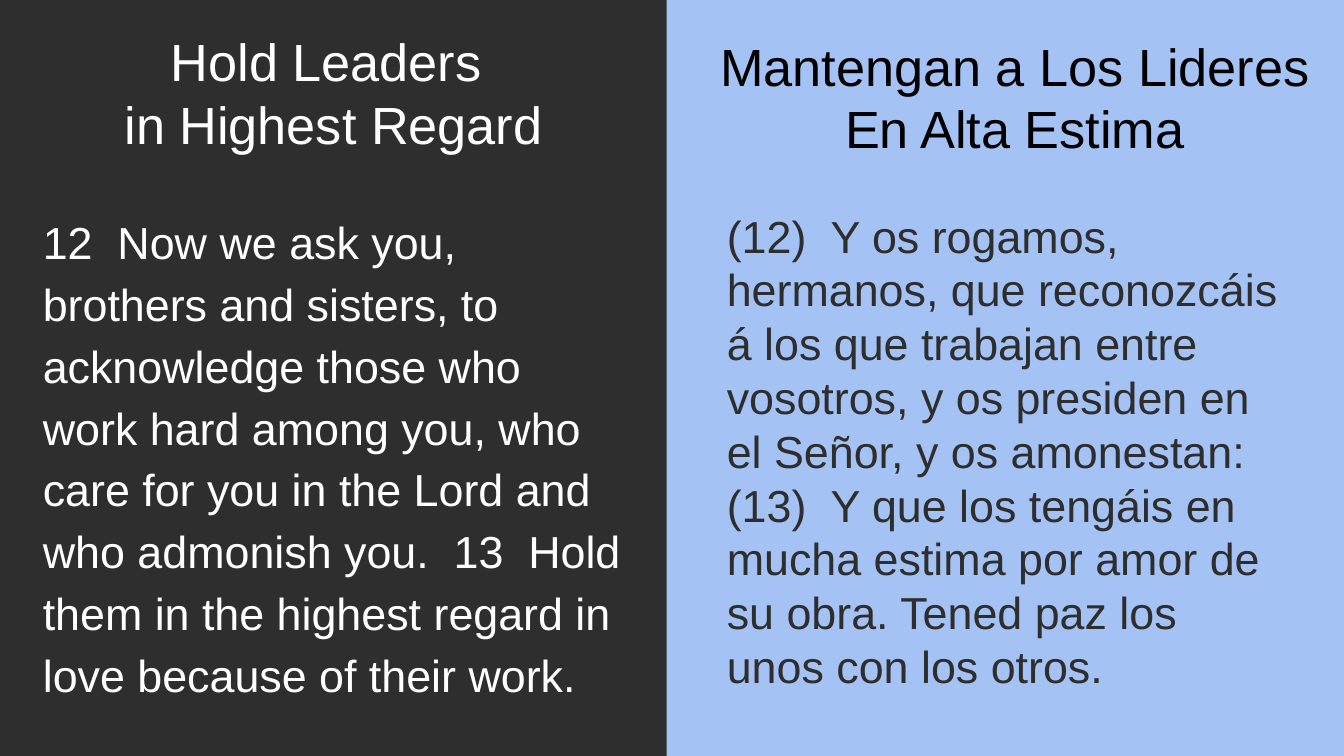
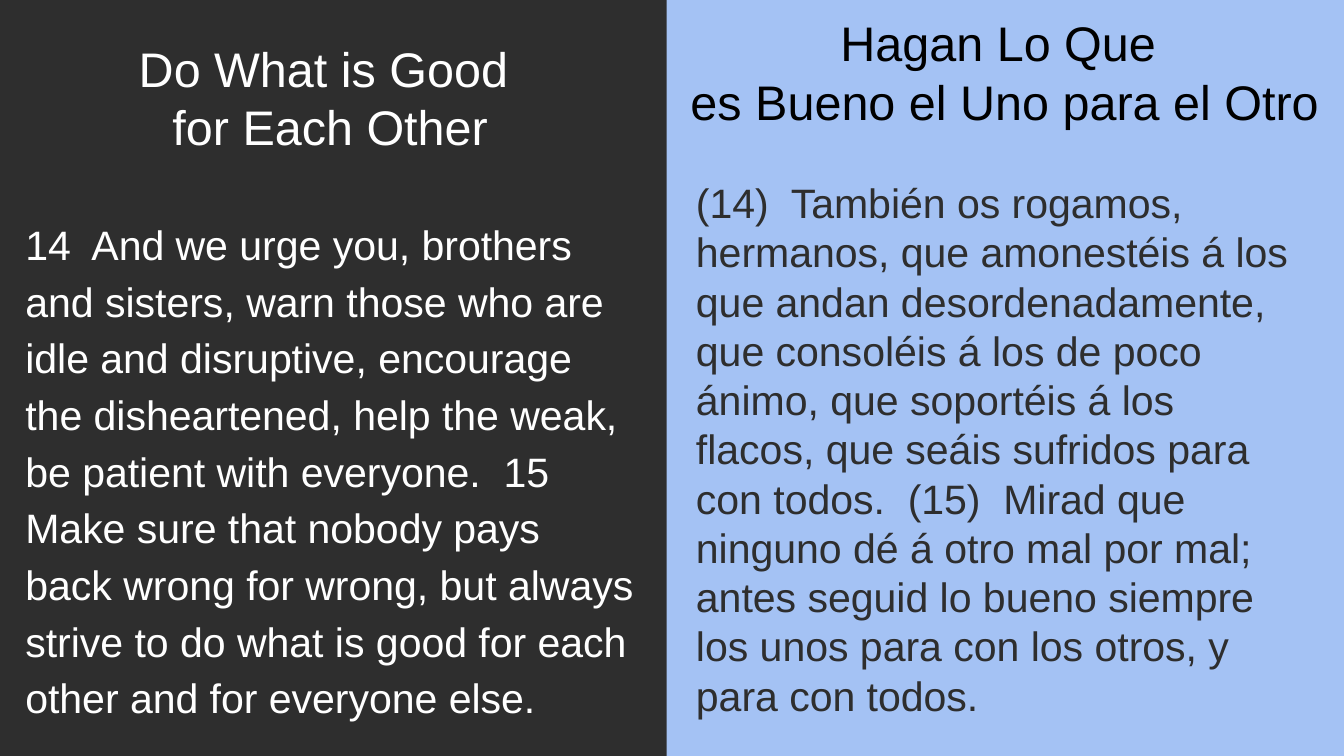
from dataclasses import dataclass

from pptx import Presentation
from pptx.dml.color import RGBColor
from pptx.enum.shapes import MSO_SHAPE
from pptx.enum.text import MSO_ANCHOR, PP_ALIGN
from pptx.util import Inches, Pt


@dataclass(frozen=True)
class Theme:
    font: str = "Arial"
    dark: RGBColor = RGBColor(0x2E, 0x2E, 0x2E)
    light: RGBColor = RGBColor(0xA4, 0xC2, 0xF4)
    white: RGBColor = RGBColor(0xFF, 0xFF, 0xFF)
    black: RGBColor = RGBColor(0, 0, 0)
    title_sizes: tuple = (28, 26)
    verse_sizes: tuple = (24, 22)
    margin: float = 0.1
    outline: float = 2.25
    english_spacing: float = 1.15


THEME = Theme()
WIDTH, HEIGHT = Inches(10), Inches(5.625)
COLUMNS = ROWS = 100
SPLIT = 49.6


@dataclass(frozen=True)
class Passage:
    title: tuple
    title_area: tuple
    verse: str
    verse_area: tuple


LESSONS = [
    (
        Passage(
            ("Hold Leaders ", "in Highest Regard"),
            (0, 2.1, SPLIT, 33.6),
            "12  Now we ask you, brothers and sisters, to acknowledge those who work hard "
            "among you, who care for you in the Lord and who admonish you.  13  Hold them "
            "in the highest regard in love because of their work.",
            (2.2, 25.6, 45.1, 67.4),
        ),
        Passage(
            ("Mantengan a Los Lideres", "En Alta Estima"),
            (51.4, 2.7, 48.2, 22.2),
            "(12)  Y os rogamos, hermanos, que reconozcáis á los que trabajan entre "
            "vosotros, y os presiden en el Señor, y os amonestan:  (13)  Y que los tengáis "
            "en mucha estima por amor de su obra. Tened paz los unos con los otros.",
            (53.1, 25.8, 43.4, 72.5),
        ),
    ),
    (
        Passage(
            ("Do What is Good ", "for Each Other"),
            (-0.2, 3.4, SPLIT, 33.6),
            "14  And we urge you, brothers and sisters, warn those who are idle and "
            "disruptive, encourage the disheartened, help the weak, be patient with "
            "everyone.  15  Make sure that nobody pays back wrong for wrong, but always "
            "strive to do what is good for each other and for everyone else.",
            (0.9, 26.3, 47.5, 69.9),
        ),
        Passage(
            ("Hagan Lo Que ", "es Bueno el Uno para el Otro"),
            (SPLIT, 0, COLUMNS - SPLIT, 18),
            "(14)  También os rogamos, hermanos, que amonestéis á los que andan "
            "desordenadamente, que consoléis á los de poco ánimo, que soportéis á los "
            "flacos, que seáis sufridos para con todos.  (15)  Mirad que ninguno dé á otro "
            "mal por mal; antes seguid lo bueno siempre los unos para con los otros, y "
            "para con todos.",
            (50.8, 21.7, 46.1, 67),
        ),
    ),
]


def place(area):
    left, top, width, height = area
    return (
        round(WIDTH * left / COLUMNS),
        round(HEIGHT * top / ROWS),
        round(WIDTH * width / COLUMNS),
        round(HEIGHT * height / ROWS),
    )


def write(box, lines, size, color, align, spacing=None):
    frame = box.text_frame
    frame.word_wrap = True
    frame.vertical_anchor = MSO_ANCHOR.TOP
    frame.margin_left = frame.margin_right = Inches(THEME.margin)
    frame.margin_top = frame.margin_bottom = Inches(THEME.margin)
    frame.text = "\n".join(lines)
    for para in frame.paragraphs:
        para.alignment = align
        if spacing:
            para.line_spacing = spacing
        for span in para.runs:
            span.font.name = THEME.font
            span.font.size = Pt(size)
            span.font.color.rgb = color


def add_block(page, area, fill, outline=None):
    block = page.shapes.add_shape(MSO_SHAPE.RECTANGLE, *place(area))
    block.shadow.inherit = False
    block.fill.solid()
    block.fill.fore_color.rgb = fill
    if outline:
        block.line.color.rgb = fill
        block.line.width = Pt(outline)
    else:
        block.line.fill.background()
    return block


def add_title(page, passage, size, color):
    box = page.shapes.add_textbox(*place(passage.title_area))
    write(box, passage.title, size, color, PP_ALIGN.CENTER)


def add_verse(page, passage, size, color, fill, outline=None, spacing=None):
    block = add_block(page, passage.verse_area, fill, outline)
    write(block, [passage.verse], size, color, PP_ALIGN.LEFT, spacing)


def add_lesson(deck, english, spanish, title_size, verse_size):
    page = deck.slides.add_slide(deck.slide_layouts[6])
    page.background.fill.solid()
    page.background.fill.fore_color.rgb = THEME.dark
    add_block(page, (SPLIT, 0, COLUMNS - SPLIT, ROWS), THEME.light)
    add_title(page, english, title_size, THEME.white)
    add_title(page, spanish, title_size, THEME.black)
    add_verse(page, english, verse_size, THEME.white, THEME.dark,
              THEME.outline, THEME.english_spacing)
    add_verse(page, spanish, verse_size, THEME.dark, THEME.light)


def main():
    deck = Presentation()
    deck.slide_width, deck.slide_height = WIDTH, HEIGHT
    for lesson, title_size, verse_size in zip(LESSONS, THEME.title_sizes, THEME.verse_sizes):
        add_lesson(deck, *lesson, title_size, verse_size)
    deck.save("out.pptx")


if __name__ == "__main__":
    main()
